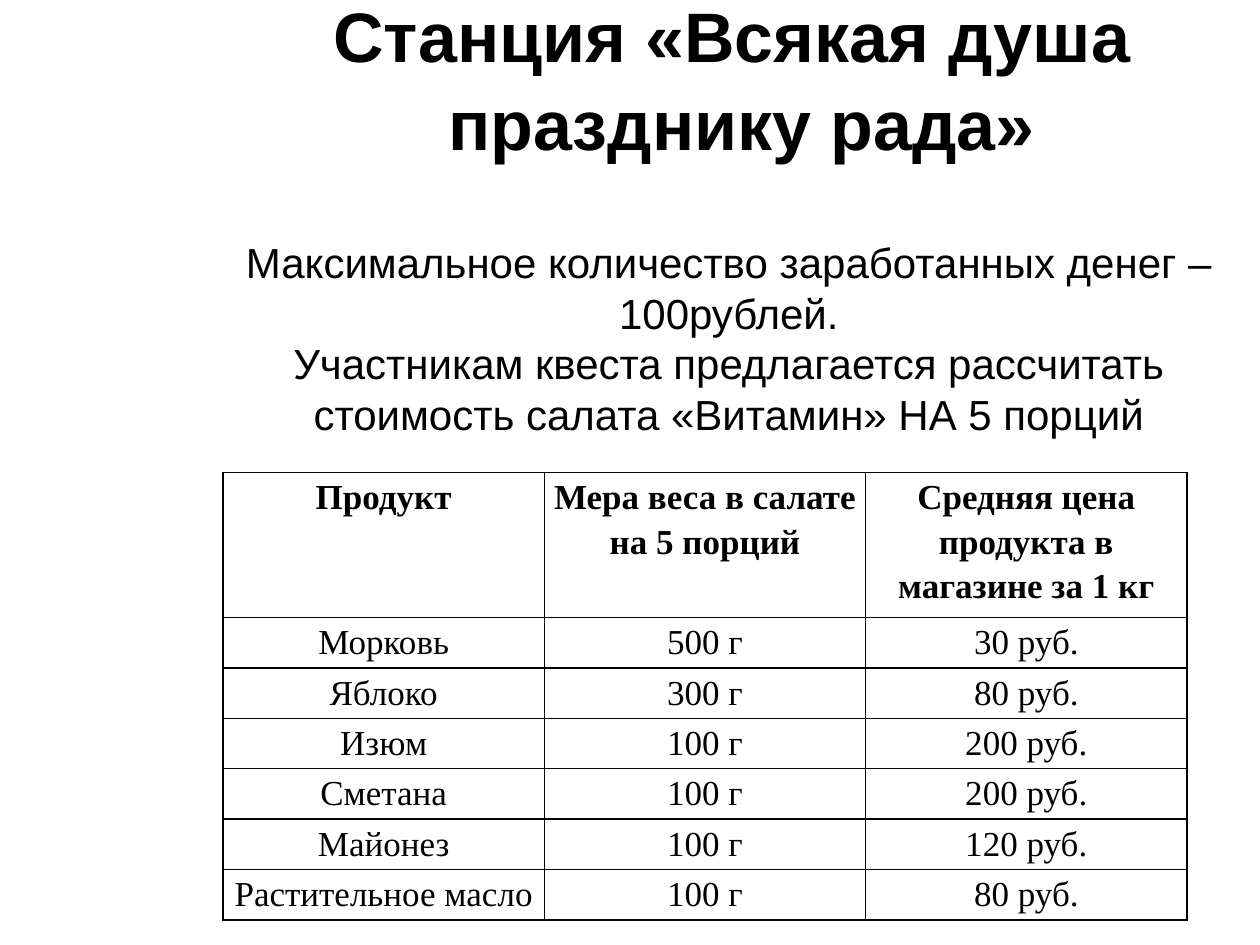
from lxml import etree
from pptx import Presentation
from pptx.dml.color import RGBColor
from pptx.enum.text import MSO_ANCHOR, PP_ALIGN
from pptx.oxml.ns import qn
from pptx.util import Inches, Pt

BLACK = RGBColor(0x00, 0x00, 0x00)
CENTER = PP_ALIGN.CENTER
MIDDLE = MSO_ANCHOR.MIDDLE
LEFT = Inches(1.77)


def add_run(paragraph, text, size, font_name, bold=False):
    paragraph.alignment = CENTER
    run = paragraph.add_run()
    run.text = text
    run.font.size = Pt(size)
    run.font.name = font_name
    run.font.bold = bold
    run.font.color.rgb = BLACK


def add_border(cell, width):
    properties = cell._tc.get_or_add_tcPr()
    for position, side in enumerate(("a:lnL", "a:lnR", "a:lnT", "a:lnB")):
        line = etree.Element(qn(side), w=str(Pt(width)))
        fill = etree.SubElement(line, qn("a:solidFill"))
        etree.SubElement(fill, qn("a:srgbClr"), val=str(BLACK))
        properties.insert(position, line)


presentation = Presentation()
presentation.slide_width = Inches(10)
presentation.slide_height = Inches(7.5)
slide = presentation.slides.add_slide(presentation.slide_layouts[6])

# Title
title = slide.shapes.add_textbox(LEFT, Inches(0), Inches(8.23), Inches(1.17))
title_frame = title.text_frame
title_frame.word_wrap = True
title_frame.vertical_anchor = MIDDLE
title_frame.margin_top = Inches(0.1)
paragraph = title_frame.paragraphs[0]
paragraph.line_spacing = 1.04
add_run(paragraph, "Станция «Всякая душа ", 40, "Arial", True)
paragraph.add_line_break()
add_run(paragraph, "празднику рада»", 40, "Arial", True)

# Task description
task = slide.shapes.add_textbox(LEFT, Inches(1.82), Inches(8.03), Inches(1.72))
task_frame = task.text_frame
task_frame.word_wrap = True
task_frame.vertical_anchor = MIDDLE
add_run(task_frame.paragraphs[0],
        "Максимальное количество заработанных денег – 100рублей.", 24, "Arial")
add_run(task_frame.add_paragraph(),
        "Участникам квеста предлагается рассчитать стоимость салата "
        "«Витамин» НА 5 порций", 24, "Arial")

# Product table
products = [
    ("Продукт", "Мера веса в салате на 5 порций",
     "Средняя цена продукта в магазине за 1 кг"),
    ("Морковь", "500 г", "30 руб."),
    ("Яблоко", "300 г", "80 руб."),
    ("Изюм", "100 г", "200 руб."),
    ("Сметана", "100 г", "200 руб."),
    ("Майонез", "100 г", "120 руб."),
    ("Растительное масло", "100 г", "80 руб."),
]
table = slide.shapes.add_table(len(products), 3, LEFT, Inches(3.75),
                               Inches(7.65), Inches(3.21)).table
table.first_row = False
table.horz_banding = False
for column in table.columns:
    column.width = Inches(2.55)
for row_index, values in enumerate(products):
    is_header = row_index == 0
    table.rows[row_index].height = Inches(0.81 if is_header else 0.4)
    for column_index, value in enumerate(values):
        cell = table.cell(row_index, column_index)
        cell.margin_left = cell.margin_right = Inches(0.07)
        cell.margin_top = cell.margin_bottom = Inches(0)
        cell.fill.background()
        add_border(cell, 1)
        paragraph = cell.text_frame.paragraphs[0]
        paragraph.line_spacing = 1.15
        add_run(paragraph, value, 20, "Times New Roman", is_header)

presentation.save("out.pptx")
